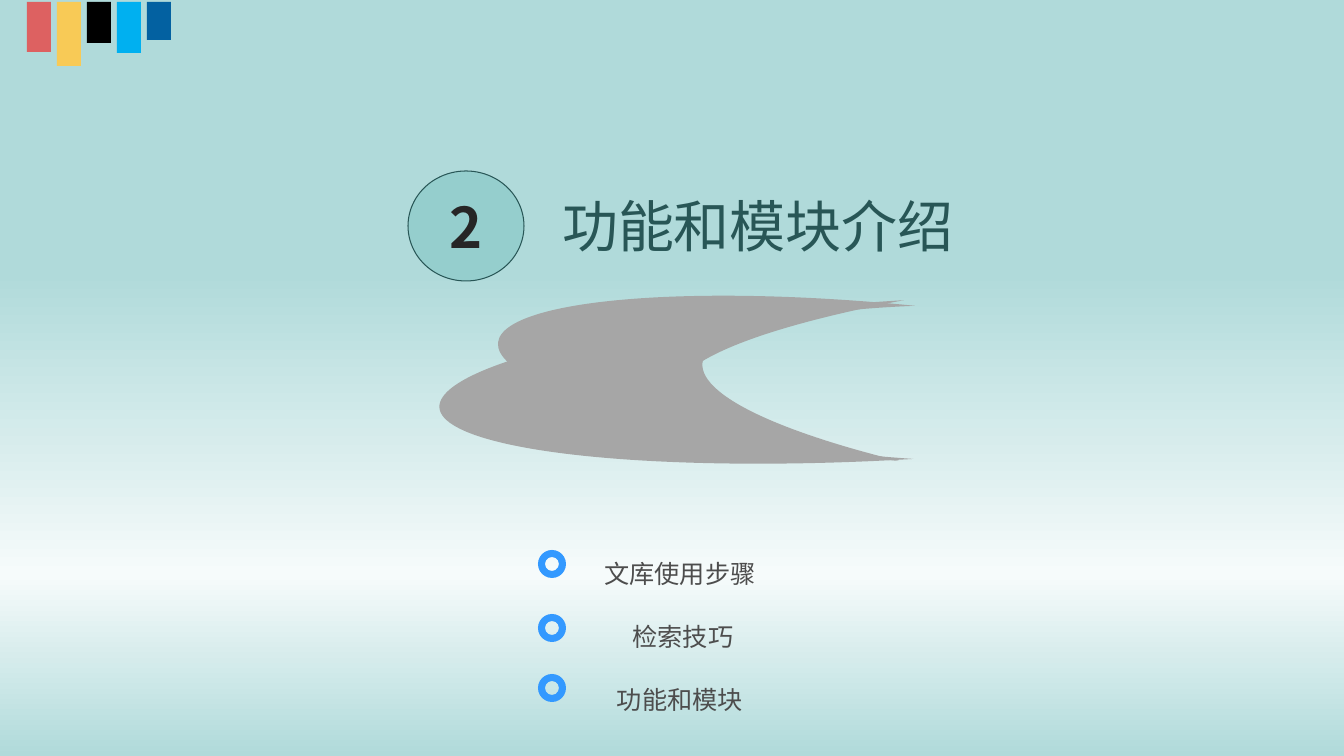
from lxml import etree
from pptx import Presentation
from pptx.dml.color import RGBColor
from pptx.enum import shapes, text
from pptx.oxml.ns import qn
from pptx.util import Pt

SLIDE_WIDTH, SLIDE_HEIGHT = 1344, 756
PX = 12192000 / SLIDE_WIDTH
CJK_FONT = "Noto Sans CJK SC"
SHAPE = shapes.MSO_SHAPE
ALIGN = text.PP_ALIGN
ANCHOR = text.MSO_ANCHOR

BARS = [("DD6161", 50), ("F8CA56", 64), ("000000", 41), ("00B0F0", 51), ("0361A1", 38)]
BACKGROUND_STOPS = [(36, "B0DADA"), (76, "F6FBFB"), (100, "B0DADA"), (100, "CAE6E6")]
# Each topic: wording, ring offset from the top of the list, left indent
TOPICS = [("文库使用步骤", 13, 0), ("检索技巧", 77, 6), ("功能和模块", 137, 0)]


def px(length):
    return round(length * PX)


def color(value):
    return RGBColor.from_string(value)


def set_values(target, values):
    for name, value in values.items():
        setattr(target, name, value)


def place(shape, left, top, width, height):
    set_values(shape, dict(left=px(left), top=px(top), width=px(width), height=px(height)))


def add_shape(slide, kind, box, fill, line=None, rotation=0):
    shape = slide.shapes.add_shape(kind, *map(px, box))
    shape.shadow.inherit = False
    shape.rotation = rotation
    shape.fill.solid()
    shape.fill.fore_color.rgb = color(fill)
    if line:
        shape.line.color.rgb = color(line)
        shape.line.width = Pt(0.75)
    else:
        shape.line.fill.background()
    return shape


def write(paragraph, wording, size, hex_color, name=CJK_FONT, bold=False, align=ALIGN.CENTER):
    paragraph.alignment = align
    run = paragraph.add_run()
    run.text = wording
    set_values(run.font, dict(size=Pt(size), name=name, bold=bold))
    run.font.color.rgb = color(hex_color)
    east_asian = etree.SubElement(run.font._element, qn("a:ea"))
    east_asian.set("typeface", CJK_FONT)


def set_background(slide):
    fill = slide.background.fill
    fill.gradient()
    fill.gradient_angle = 270
    stops = slide.background._cSld.find(".//" + qn("a:gsLst"))
    for stop in list(stops):
        stops.remove(stop)
    for position, value in BACKGROUND_STOPS:
        stop = etree.SubElement(stops, qn("a:gs"), pos=str(position * 1000))
        etree.SubElement(stop, qn("a:srgbClr"), val=value)


def add_bars(slide, left, top):
    for index, (fill, height) in enumerate(BARS):
        add_shape(slide, SHAPE.RECTANGLE, (left + 30 * index, top, 24, height), fill)


def add_swoosh(slide, left, top):
    lower = add_shape(slide, SHAPE.MOON, (left, top + 29, 470, 159), "A6A6A6", rotation=356.6)
    lower.adjustments[0] = 0.504
    add_shape(slide, SHAPE.MOON, (left + 58, top, 411, 156), "A6A6A6", rotation=5.7)


def add_heading(slide, left, top):
    # Section number
    badge = add_shape(slide, SHAPE.FLOWCHART_CONNECTOR, (left, top, 116, 110), "95CECD", "285656")
    badge.text_frame.vertical_anchor = ANCHOR.MIDDLE
    write(badge.text_frame.paragraphs[0], "2", 40, "262626", bold=True)
    # Section title
    title = slide.shapes.title
    place(title, left + 144, top + 15, 416, 78)
    set_values(title.text_frame, dict(word_wrap=False, vertical_anchor=ANCHOR.MIDDLE,
                                      auto_size=text.MSO_AUTO_SIZE.NONE))
    write(title.text_frame.paragraphs[0], "功能和模块介绍", 40, "285656", "Arial", align=ALIGN.LEFT)


def add_topics(slide, left, top, width, height):
    box = slide.shapes.add_textbox(*map(px, (left, top, width, height)))
    frame = box.text_frame
    frame.word_wrap = True
    for index, (wording, ring_top, indent) in enumerate(TOPICS):
        paragraph = frame.add_paragraph() if index else frame.paragraphs[0]
        set_values(paragraph, dict(line_spacing=Pt(33.5), space_before=Pt(11.5 if index else 0)))
        if indent:
            paragraph._p.get_or_add_pPr().set("marL", str(px(indent)))
        write(paragraph, wording, 18, "4D4D4D")
        add_shape(slide, SHAPE.DONUT, (left + 194, top + ring_top, 28, 28), "3399FF")


def main():
    presentation = Presentation()
    set_values(presentation, dict(slide_width=px(SLIDE_WIDTH), slide_height=px(SLIDE_HEIGHT)))
    slide = presentation.slides.add_slide(presentation.slide_layouts[5])
    set_background(slide)
    add_bars(slide, 27, 2)
    add_swoosh(slide, 439, 285)
    add_heading(slide, 408, 171)
    add_topics(slide, 344, 537, 672, 183)
    presentation.save("out.pptx")


if __name__ == "__main__":
    main()
